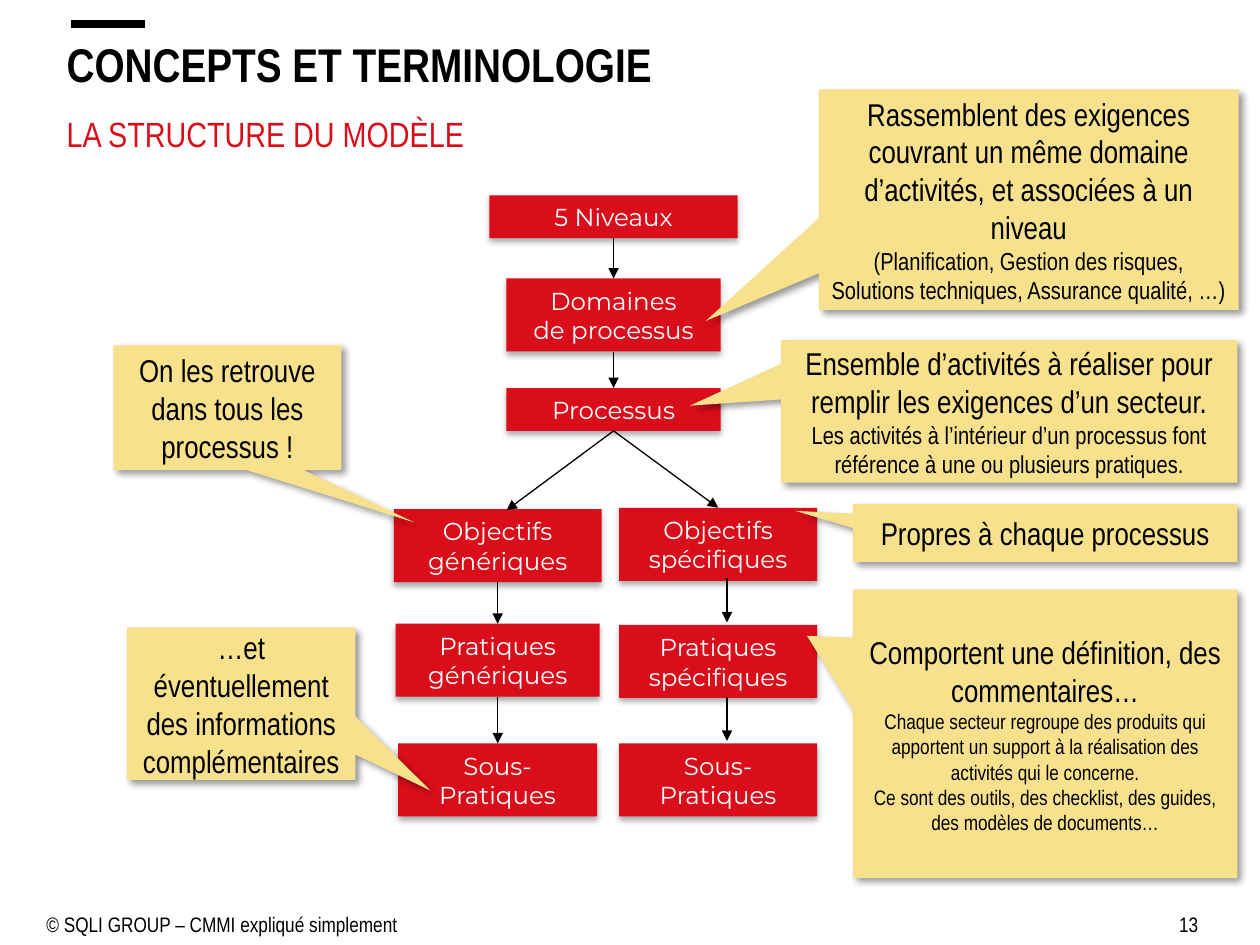
from dataclasses import dataclass

import lxml.etree
import pptx
import pptx.dml.color
import pptx.enum.shapes
import pptx.enum.text
import pptx.oxml.ns
import pptx.util

COLS, ROWS = 100, 75
WIDTH, HEIGHT = pptx.util.Inches(10), pptx.util.Inches(7.5)

RED, SAND, BLACK, WHITE = "DA0E1A", "F7E18D", "000000", "FFFFFF"
SANS, ROUND = "Arial Narrow", "Montserrat"
TRUNK, LEFT, RIGHT = 48.7, 39.5, 57  # centre columns of the tree

CENTER = pptx.enum.text.PP_ALIGN.CENTER
TOP = pptx.enum.text.MSO_ANCHOR.TOP
MIDDLE = pptx.enum.text.MSO_ANCHOR.MIDDLE
KINDS = pptx.enum.shapes.MSO_SHAPE


@dataclass
class Shade:
    alpha: int
    blur: float
    dist: float
    angle: int


@dataclass
class Label:
    text: str
    place: tuple
    size: int
    hue: str = BLACK
    bold: bool = False
    anchor: object = MIDDLE
    space: float = 1.0


@dataclass
class Box:
    name: str
    lines: list
    mid: float
    top: float
    width: float
    height: float


@dataclass
class Note:
    lines: list  # (text, size) pairs
    place: tuple
    tip: tuple


@dataclass
class Arrow:
    """Each end is the name of a box or a (column, row) point."""
    start: object
    end: object


LABELS = [
    Label("CONCEPTS ET TERMINOLOGIE", (4.3, 3.1, 91.9, 3.9), 27, bold=True),
    Label("LA STRUCTURE DU MODÈLE", (4.3, 7.6, 91.9, 5.5), 20, RED,
          anchor=TOP, space=1.25),
    Label("© SQLI GROUP – CMMI expliqué simplement",
          (2.7, 71.7, 55.3, 3.3), 12),
    Label("13", (92.6, 71.7, 6.3, 3.3), 12),
]

BOXES = [
    Box("levels", ["5 Niveaux"], TRUNK, 15.5, 19.7, 3.4),
    Box("fields", ["Domaines", "de processus"], TRUNK, 22.1, 17, 5.8),
    Box("process", ["Processus"], TRUNK, 30.8, 17, 3.4),
    Box("goals", ["Objectifs génériques"], LEFT, 40.4, 16.5, 5.8),
    Box("habits", ["Pratiques", "génériques"], LEFT, 49.5, 16.2, 5.8),
    Box("parts", ["Sous-Pratiques"], LEFT, 59, 15.8, 5.8),
    Box("own goals", ["Objectifs", "spécifiques"], RIGHT, 40.3, 15.7, 5.8),
    Box("own habits", ["Pratiques spécifiques"], RIGHT, 49.6, 15.7, 5.8),
    Box("own parts", ["Sous-Pratiques"], RIGHT, 59, 15.7, 5.8),
]

ARROWS = [
    Arrow("levels", "fields"),
    Arrow("fields", "process"),
    Arrow("process", (40.2, 40.5)),
    Arrow("process", "own goals"),
    Arrow("goals", "habits"),
    Arrow("habits", "parts"),
    Arrow((57.7, 45.9), (57.7, 49.4)),
    Arrow((57.7, 55.3), (57.7, 58.8)),
]

NOTES = [
    Note([("On les retrouve dans tous les processus !", 18)],
         (9, 27.4, 18.1, 9.9), (0.82, 0.92)),
    Note([("…et éventuellement des informations complémentaires", 18)],
         (10.1, 49.8, 18.1, 12.1), (0.83, 0.57)),
    Note([("Rassemblent des exigences couvrant un même domaine "
           "d’activités, et associées à un niveau", 18),
          ("(Planification, Gestion des risques, Solutions techniques, "
           "Assurance qualité, …)", 14)],
         (65, 7.1, 33.3, 17.5), (-0.77, 0.55)),
    Note([("Ensemble d’activités à réaliser pour remplir les exigences "
           "d’un secteur.", 18),
          ("Les activités à l’intérieur d’un processus font référence à "
           "une ou plusieurs pratiques.", 14)],
         (62, 27, 36.2, 11.3), (-0.7, -0.04)),
    Note([("Propres à chaque processus", 18)],
         (67.7, 40, 30.5, 4.6), (-0.65, -0.38)),
    Note([("Comportent une définition, des commentaires…", 18),
          ("Chaque secteur regroupe des produits qui apportent un support "
           "à la réalisation des activités qui le concerne.", 12),
          ("Ce sont des outils, des checklist, des guides, des modèles de "
           "documents…", 12)],
         (67.7, 46.8, 30.5, 22.9), (-0.62, -0.34)),
]


def across(cols: float) -> int:
    return round(WIDTH * cols / COLS)


def down(rows: float) -> int:
    return round(HEIGHT * rows / ROWS)


def frame(place: tuple) -> tuple:
    left, top, width, height = place
    return across(left), down(top), across(width), down(height)


def paint(hue: str) -> pptx.dml.color.RGBColor:
    return pptx.dml.color.RGBColor.from_string(hue)


def add(parent, tag: str, **traits):
    node = lxml.etree.SubElement(parent, pptx.oxml.ns.qn(tag))
    for key, value in traits.items():
        node.set(key, str(value))
    return node


def write(shape, lines: list, face: str, hue: str, align=None,
          anchor=MIDDLE, bold: bool = False, space: float = 1.0) -> None:
    body = shape.text_frame
    body.word_wrap = True
    body.vertical_anchor = anchor
    body.text = "\n".join(text for text, _ in lines)
    for para, (_, size) in zip(body.paragraphs, lines):
        para.alignment = align
        para.line_spacing = space
        for run in para.runs:
            run.font.name = face
            run.font.size = pptx.util.Pt(size)
            run.font.bold = bold
            run.font.color.rgb = paint(hue)


def draw_label(slide, label: Label) -> None:
    shape = slide.shapes.add_textbox(*frame(label.place))
    write(shape, [(label.text, label.size)], SANS, label.hue,
          anchor=label.anchor, bold=label.bold, space=label.space)


def draw_card(slide, kind, place: tuple, fill: str, shade: Shade):
    """Add a filled shape without outline, with a soft shadow."""
    shape = slide.shapes.add_shape(kind, *frame(place))
    shape.fill.solid()
    shape.fill.fore_color.rgb = paint(fill)
    shape.line.fill.background()
    shape.shadow.inherit = False
    effects = shape._element.spPr.find(pptx.oxml.ns.qn("a:effectLst"))
    outer = add(effects, "a:outerShdw", blurRad=pptx.util.Pt(shade.blur),
                dist=pptx.util.Pt(shade.dist), dir=shade.angle * 60000,
                algn="ctr", rotWithShape=0)
    add(add(outer, "a:srgbClr", val=BLACK), "a:alpha", val=shade.alpha * 1000)
    return shape


def draw_box(slide, box: Box):
    place = (box.mid - box.width / 2, box.top, box.width, box.height)
    shape = draw_card(slide, KINDS.RECTANGLE, place, RED,
                      Shade(32, 3.5, 2.2, 90))
    write(shape, [(text, 14) for text in box.lines], ROUND, WHITE, CENTER)
    return shape


def draw_note(slide, note: Note) -> None:
    shape = draw_card(slide, KINDS.RECTANGULAR_CALLOUT, note.place, SAND,
                      Shade(40, 4, 3, 45))
    for index, share in enumerate(note.tip):
        shape.adjustments[index] = share
    body = shape.text_frame
    body.margin_left = body.margin_right = pptx.util.Inches(0.09)
    write(shape, note.lines, SANS, BLACK, CENTER)


def draw_line(slide, start: tuple, end: tuple, weight: float):
    line = slide.shapes.add_connector(
        pptx.enum.shapes.MSO_CONNECTOR.STRAIGHT,
        across(start[0]), down(start[1]), across(end[0]), down(end[1]))
    line.line.color.rgb = paint(BLACK)
    line.line.width = pptx.util.Pt(weight)
    add(line._element.spPr, "a:effectLst")
    return line


def draw_arrow(slide, arrow: Arrow, cards: dict) -> None:
    points = [(0, 0) if isinstance(end, str) else end
              for end in (arrow.start, arrow.end)]
    line = draw_line(slide, *points, 0.75)
    if arrow.start in cards:
        line.begin_connect(cards[arrow.start], 2)
    if arrow.end in cards:
        line.end_connect(cards[arrow.end], 0)
    stroke = line._element.spPr.find(pptx.oxml.ns.qn("a:ln"))
    add(stroke, "a:tailEnd", type="triangle")


def main() -> None:
    deck = pptx.Presentation()
    deck.slide_width, deck.slide_height = WIDTH, HEIGHT
    slide = deck.slides.add_slide(deck.slide_layouts[6])
    draw_line(slide, (5.6, 1.9), (11.5, 1.9), 4.5)
    for label in LABELS:
        draw_label(slide, label)
    cards = {box.name: draw_box(slide, box) for box in BOXES}
    for arrow in ARROWS:
        draw_arrow(slide, arrow, cards)
    for note in NOTES:
        draw_note(slide, note)
    deck.save("out.pptx")


if __name__ == "__main__":
    main()
